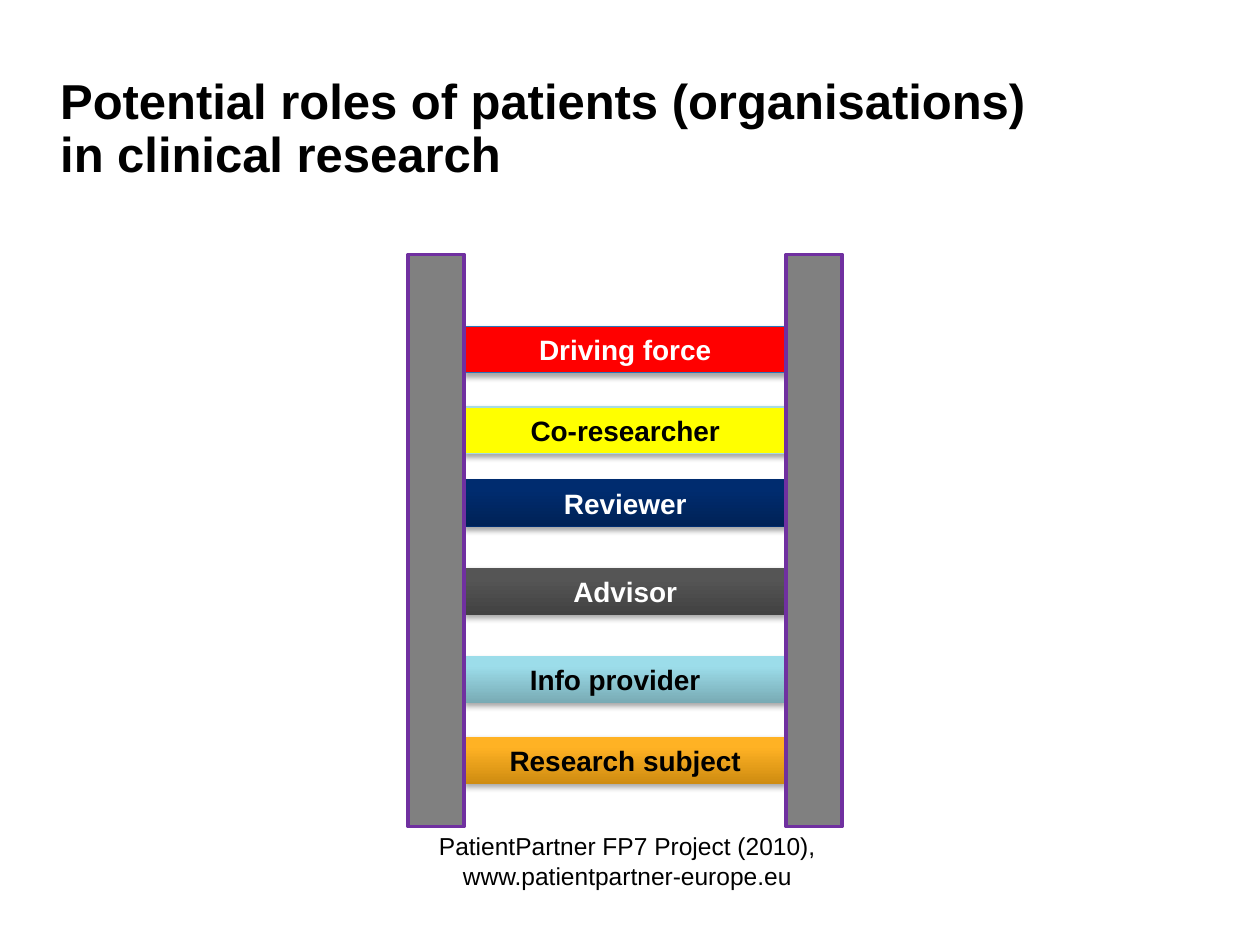
from dataclasses import dataclass
from typing import Optional

from lxml import etree
from pptx import Presentation, util as u
from pptx.dml.color import RGBColor
from pptx.enum import shapes, text
from pptx.oxml.ns import qn

COLORS = {
    "black": "000000", "white": "FFFFFF", "rail": "808080", "purple": "7030A0",
    "red": "FF0000", "blue": "2875BB", "yellow": "FFFF00", "pale": "A5DAE4",
    "navy": "002C6F", "navy_dark": "002256", "grey": "555555", "grey_dark": "424242",
    "aqua": "9CDDEA", "aqua_dark": "78AAB4", "amber": "FFB224", "amber_dark": "CF8C11",
}
FONT = "Arial"
RUNG_LEFT, RUNG_WIDTH, RUNG_HEIGHT = 36.85, 25.55, 4.93
RAIL_TOP, RAIL_WIDTH, RAIL_HEIGHT = 26.93, 4.45, 60.53

prs = Presentation()
prs.slide_width, prs.slide_height = u.Inches(10), u.Inches(7.5)


@dataclass
class Box:
    """A rectangle in percent of the slide's width and height."""
    left: float
    top: float
    width: float
    height: float

    def emu(self) -> tuple:
        w, h = prs.slide_width / 100, prs.slide_height / 100
        return tuple(round(v) for v in
                     (self.left * w, self.top * h, self.width * w, self.height * h))


@dataclass
class Rung:
    label: str
    top: float
    fill: str
    font: str
    line: Optional[str] = None
    shade: Optional[str] = None
    indent: Optional[float] = None  # inches; left-aligned when given


RUNGS = [
    Rung("Research subject", 78, "amber", "black", shade="amber_dark"),
    Rung("Info provider", 69.47, "aqua", "black", shade="aqua_dark", indent=0.52),
    Rung("Advisor", 60.13, "grey", "white", shade="grey_dark"),
    Rung("Reviewer", 50.8, "navy", "white", line="navy", shade="navy_dark"),
    Rung("Co-researcher", 43.07, "yellow", "black", line="pale"),
    Rung("Driving force", 34.53, "red", "white", line="blue"),
]


def rgb(name: str) -> RGBColor:
    return RGBColor.from_string(COLORS[name])


def add_run(p, words: str, size: float, color: str, bold: bool = False) -> None:
    r = p.add_run()
    r.text = words
    r.font.name, r.font.size, r.font.bold = FONT, u.Pt(size), bold
    r.font.color.rgb = rgb(color)


def add_bar(s, box: Box, fill: str, line: Optional[str], width: float):
    sp = s.shapes.add_shape(shapes.MSO_SHAPE.RECTANGLE, *box.emu())
    sp.shadow.inherit = False
    sp.fill.solid()
    sp.fill.fore_color.rgb = rgb(fill)
    if line:
        sp.line.color.rgb = rgb(line)
        sp.line.width = u.Pt(width)
    else:
        sp.line.fill.background()
    return sp


def add_shadow(sp) -> None:
    effects = sp._element.spPr.find(qn("a:effectLst"))
    shadow = etree.SubElement(effects, qn("a:outerShdw"), blurRad="40000",
                              dist="23000", dir="5400000", rotWithShape="0")
    color = etree.SubElement(shadow, qn("a:srgbClr"), val=COLORS["black"])
    etree.SubElement(color, qn("a:alpha"), val="35000")


def add_rung(s, rung: Rung) -> None:
    box = Box(RUNG_LEFT, rung.top, RUNG_WIDTH, RUNG_HEIGHT)
    sp = add_bar(s, box, rung.fill, rung.line, 0.75)
    add_shadow(sp)
    if rung.shade:
        sp.fill.gradient()
        sp.fill.gradient_angle = 90
        for stop, color, position in zip(sp.fill.gradient_stops,
                                         (rung.shade, rung.fill), (0, 0.8)):
            stop.color.rgb = rgb(color)
            stop.position = position
    tf = sp.text_frame
    tf.vertical_anchor = text.MSO_ANCHOR.MIDDLE
    p = tf.paragraphs[0]
    p.alignment = text.PP_ALIGN.CENTER
    if rung.indent is not None:
        p.alignment = text.PP_ALIGN.LEFT
        tf.margin_left = u.Inches(rung.indent)
    add_run(p, rung.label, 16, rung.font, True)


def add_text_box(s, box: Box):
    tf = s.shapes.add_textbox(*box.emu()).text_frame
    tf.word_wrap = True
    return tf


def main() -> None:
    s = prs.slides.add_slide(prs.slide_layouts[6])

    title = add_text_box(s, Box(3.8, 6.67, 78.7, 14.27))
    title.vertical_anchor = text.MSO_ANCHOR.MIDDLE
    p = title.paragraphs[0]
    p.line_spacing = 0.9
    add_run(p, "Potential roles of patients (organisations) in clinical research",
            28, "black", True)

    for rung in RUNGS:
        add_rung(s, rung)
    for left in (RUNG_LEFT + RUNG_WIDTH, RUNG_LEFT - RAIL_WIDTH):
        add_bar(s, Box(left, RAIL_TOP, RAIL_WIDTH, RAIL_HEIGHT), "rail", "purple", 2)

    p = add_text_box(s, Box(25.6, 87.33, 48.4, 7.6)).paragraphs[0]
    p.alignment = text.PP_ALIGN.CENTER
    add_run(p, "PatientPartner FP7 Project (2010),", 14, "black")
    p.add_line_break()
    add_run(p, "www.patientpartner-europe.eu", 14, "black")

    prs.save("out.pptx")


if __name__ == "__main__":
    main()
